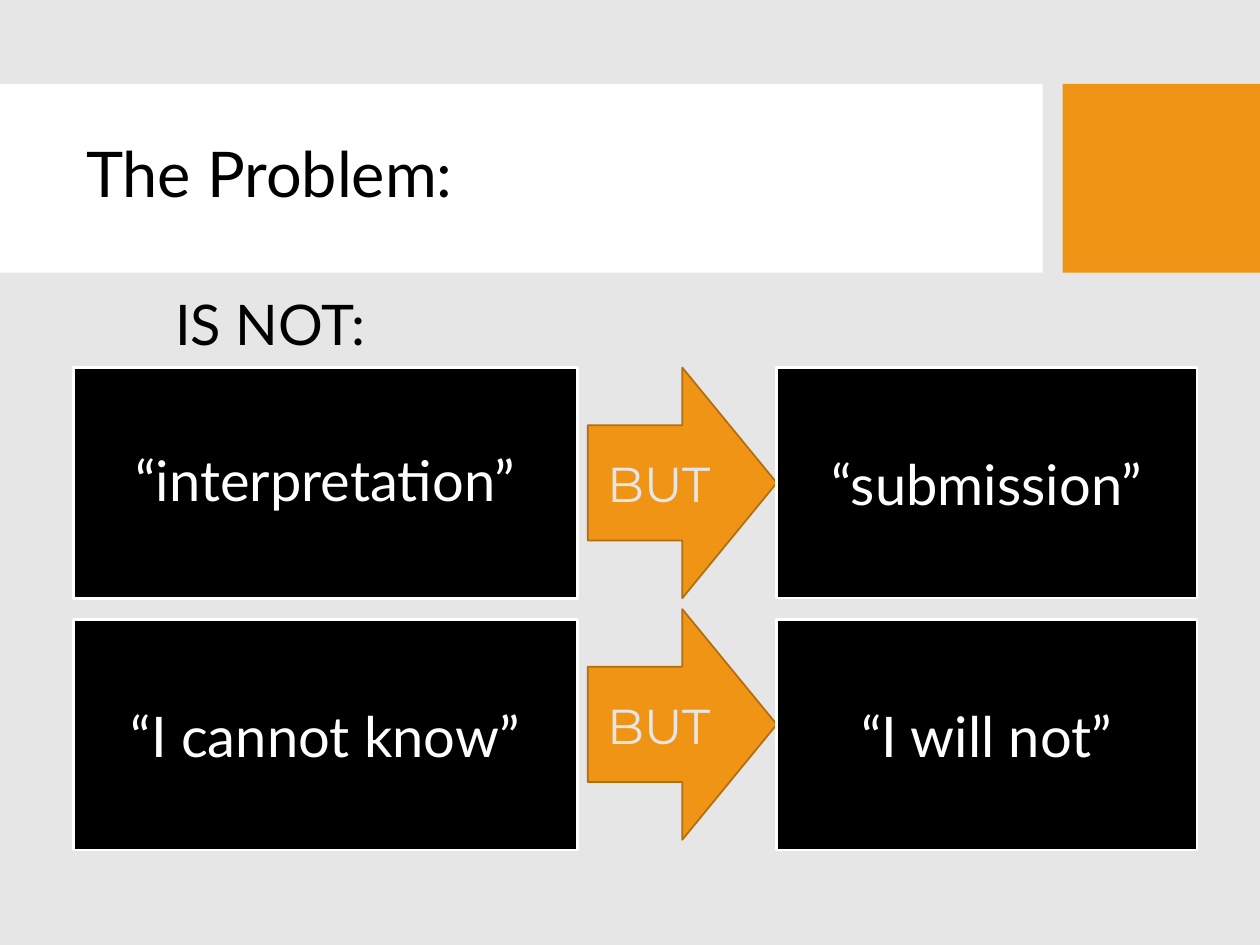
import pptx
import pptx.util
import pptx.dml.color
import pptx.enum.shapes
import pptx.enum.text
import lxml.etree

Cm = pptx.util.Cm
Pt = pptx.util.Pt
Kind = pptx.enum.shapes.MSO_SHAPE
Align = pptx.enum.text.PP_ALIGN
Anchor = pptx.enum.text.MSO_ANCHOR
Fit = pptx.enum.text.MSO_AUTO_SIZE


class Theme:
    back = "E7E6E6"
    dark = "000000"
    light = "FFFFFF"
    accent = "F09415"
    edge = "B26D10"
    font = "Lato"
    label = "Montserrat"
    title = 36
    body = 32
    small = 28


def paint(shape, fill, line=None, width=0):
    shape.fill.solid()
    shape.fill.fore_color.rgb = pptx.dml.color.RGBColor.from_string(fill)
    if line:
        shape.line.color.rgb = pptx.dml.color.RGBColor.from_string(line)
        shape.line.width = Pt(width)
    else:
        shape.line.fill.background()


def write(shape, text, size, color, font=Theme.font, align=Align.CENTER, space=1.0, wrap=True):
    frame = shape.text_frame
    frame.word_wrap = wrap
    frame.auto_size = Fit.NONE if wrap else Fit.SHAPE_TO_FIT_TEXT
    frame.vertical_anchor = Anchor.MIDDLE if wrap else Anchor.TOP
    para = frame.paragraphs[0]
    para.alignment = align
    para.line_spacing = space
    para.space_before = Pt(0)
    run = para.add_run()
    run.text = text
    run.font.name = font
    run.font.size = Pt(size)
    run.font.color.rgb = pptx.dml.color.RGBColor.from_string(color)


deck = pptx.Presentation()
deck.slide_width = Cm(25.4)
deck.slide_height = Cm(19.05)
slide = deck.slides.add_slide(deck.slide_layouts[1])
slide.background.fill.solid()
slide.background.fill.fore_color.rgb = pptx.dml.color.RGBColor.from_string(Theme.back)
shapes = slide.shapes
title = shapes.title
body = slide.placeholders[1]

for left, width, fill in [(0, 21.02, Theme.light), (21.42, 3.98, Theme.accent)]:
    band = shapes.add_shape(Kind.RECTANGLE, Cm(left), Cm(1.69), Cm(width), Cm(3.81))
    band.shadow.inherit = False
    paint(band, fill)
    title.element.addprevious(band.element)

title.left, title.top, title.width, title.height = Cm(1.48), Cm(2.08), Cm(19.13), Cm(3)
write(title, "The Problem:", Theme.title, Theme.dark, align=Align.LEFT, space=0.9)

head = shapes.add_textbox(Cm(3.28), Cm(5.72), Cm(4.52), Cm(1.63))
write(head, "IS NOT:", Theme.body, Theme.dark, align=Align.LEFT, wrap=False)

props = body.text_frame.paragraphs[0]._p.get_or_add_pPr()
props.set("marL", "0")
props.set("indent", "0")
lxml.etree.SubElement(props, pptx.oxml.ns.qn("a:buNone"))

tall = 4.65
rows = [
    (7.41, 7.41, "“interpretation”", "“submission”"),
    (12.49, 12.28, "“I cannot know”", "“I will not”"),
]
for top, mid, first, second in rows:
    arrow = shapes.add_shape(Kind.RIGHT_ARROW, Cm(11.85), Cm(mid), Cm(3.81), Cm(tall))
    arrow.shadow.inherit = False
    paint(arrow, Theme.accent, Theme.edge, 1)
    write(arrow, "BUT", Theme.small, Theme.back, Theme.label)
    for left, width, text in [(1.48, 10.16, first), (15.66, 8.47, second)]:
        lead = text == rows[0][2]
        if lead:
            card = body
            card.left, card.top, card.width, card.height = Cm(left), Cm(top), Cm(width), Cm(tall)
        else:
            card = shapes.add_shape(Kind.RECTANGLE, Cm(left), Cm(top), Cm(width), Cm(tall))
            card.shadow.inherit = False
        paint(card, Theme.dark, Theme.light, 1.5)
        write(card, text, Theme.body, Theme.light, space=0.9 if lead else 1.0)

deck.save("out.pptx")
